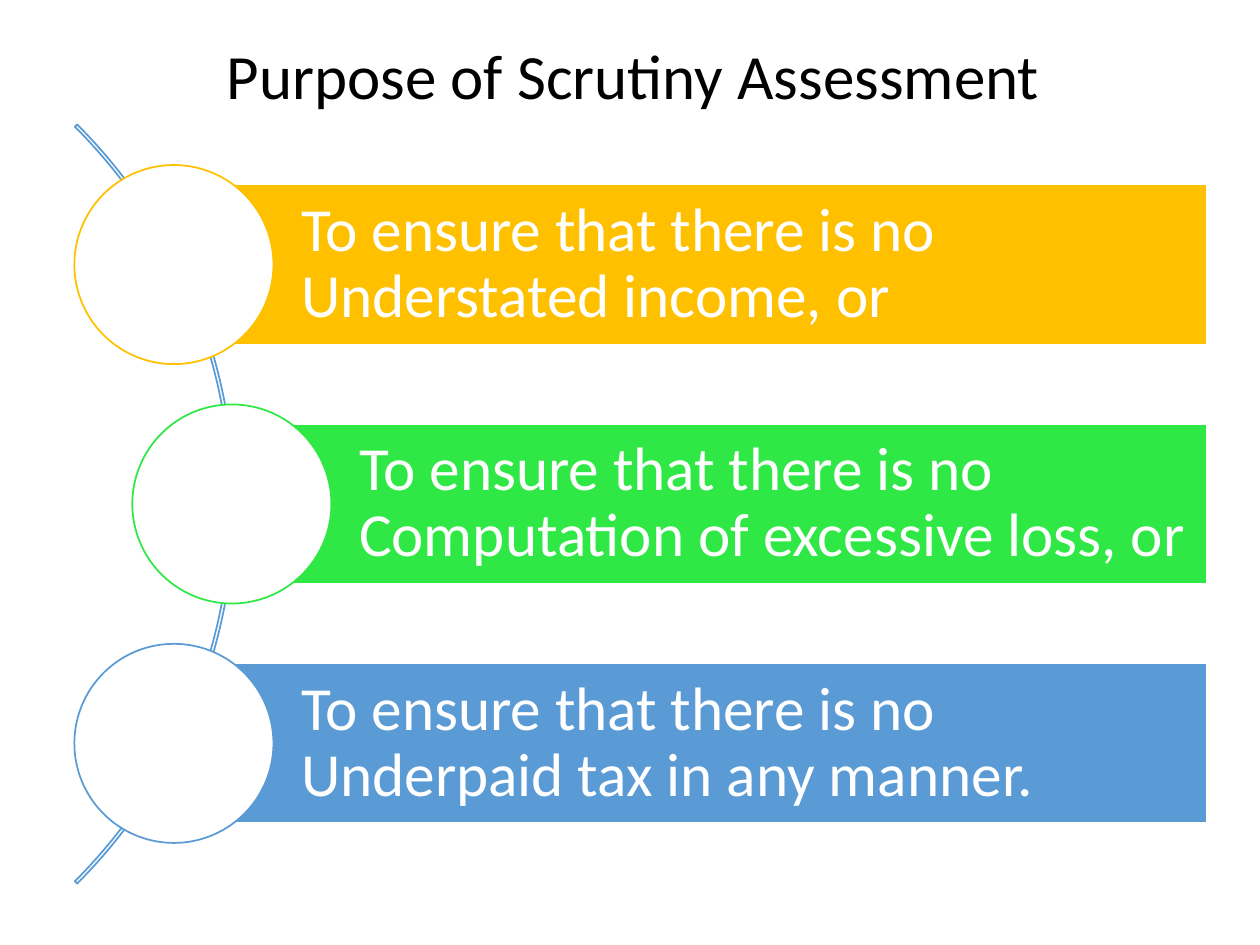
from dataclasses import dataclass

from pptx import Presentation
from pptx.dml.color import RGBColor
from pptx.enum.shapes import MSO_SHAPE
from pptx.enum.text import MSO_ANCHOR, MSO_AUTO_SIZE, PP_ALIGN
from pptx.util import Inches, Pt

ARC, BAR, CIRCLE = MSO_SHAPE.BLOCK_ARC, MSO_SHAPE.RECTANGLE, MSO_SHAPE.OVAL
MIDDLE, TOP = MSO_ANCHOR.MIDDLE, MSO_ANCHOR.TOP
LEFT, CENTER = PP_ALIGN.LEFT, PP_ALIGN.CENTER
NO_AUTOFIT = MSO_AUTO_SIZE.NONE
TITLE_ONLY = 5


@dataclass(frozen=True)
class Theme:
    font: str = "Calibri"
    title_size: int = 36
    body_size: int = 35
    black: str = "000000"
    white: str = "FFFFFF"
    gold: str = "FFC000"
    green: str = "30E845"
    blue: str = "5B9BD5"


THEME = Theme()

# Centre of each circle's column, then bar colour and wording
PURPOSES = [
    (1.38, THEME.gold, "To ensure that there is no Understated income, or"),
    (1.84, THEME.green,
     "To ensure that there is no Computation of excessive loss, or"),
    (1.38, THEME.blue, "To ensure that there is no Underpaid tax in any manner."),
]
FIRST_CENTER, ROW_STEP = 2.1, 1.9
BAR_RIGHT, BAR_HEIGHT = 9.58, 1.27
CIRCLE_SIZE = 1.58
ARC_LEFT, ARC_TOP, ARC_SIZE = -6.66, -0.26, 8.52


def set_text(shape, text, *, size, color, align=LEFT, anchor=MIDDLE,
             insets=(0.1, 0.1, 0.1, 0.1), wrap=True, line_spacing=1.0):
    frame = shape.text_frame
    frame.text = text
    frame.auto_size = NO_AUTOFIT
    frame.word_wrap = wrap
    frame.vertical_anchor = anchor
    (frame.margin_left, frame.margin_top,
     frame.margin_right, frame.margin_bottom) = map(Inches, insets)
    paragraph = frame.paragraphs[0]
    paragraph.alignment = align
    paragraph.line_spacing = line_spacing
    font = paragraph.runs[0].font
    font.name = THEME.font
    font.size = Pt(size)
    font.color.rgb = RGBColor.from_string(color)


def add_shape(slide, kind, left, top, width, height, *, line, fill=None):
    shape = slide.shapes.add_shape(
        kind, Inches(left), Inches(top), Inches(width), Inches(height))
    shape.shadow.inherit = False
    if fill:
        shape.fill.solid()
        shape.fill.fore_color.rgb = RGBColor.from_string(fill)
    else:
        shape.fill.background()
    shape.line.color.rgb = RGBColor.from_string(line)
    shape.line.width = Pt(1)
    return shape


def add_title(slide, text):
    title = slide.shapes.title
    title.left, title.top = Inches(1.67), Inches(0.24)
    title.width, title.height = Inches(6.71), Inches(0.71)
    set_text(title, text, size=THEME.title_size, color=THEME.black, align=CENTER,
             anchor=TOP, insets=(0.1, 0.05, 0.1, 0.05), wrap=False)


def add_arc(slide):
    arc = add_shape(slide, ARC, ARC_LEFT, ARC_TOP, ARC_SIZE, ARC_SIZE,
                    line=THEME.blue)
    # Start angle, end angle (315 and 45 degrees) and band thickness
    for index, value in enumerate((189, 27, 0.003)):
        arc.adjustments[index] = value


def add_purpose(slide, center_x, center_y, color, text):
    bar = add_shape(slide, BAR, center_x, center_y - BAR_HEIGHT / 2,
                    BAR_RIGHT - center_x, BAR_HEIGHT, fill=color, line=THEME.white)
    set_text(bar, text, size=THEME.body_size, color=THEME.white,
             insets=(1.01, 0.1, 0.1, 0.1), line_spacing=0.9)
    add_shape(slide, CIRCLE, center_x - CIRCLE_SIZE / 2, center_y - CIRCLE_SIZE / 2,
              CIRCLE_SIZE, CIRCLE_SIZE, fill=THEME.white, line=color)


def main():
    presentation = Presentation()
    presentation.slide_width, presentation.slide_height = Inches(10), Inches(7.5)
    slide = presentation.slides.add_slide(presentation.slide_layouts[TITLE_ONLY])

    # Heading
    add_title(slide, "Purpose of Scrutiny Assessment")

    # Curve behind the list, then one row per purpose
    add_arc(slide)
    for row, (center_x, color, text) in enumerate(PURPOSES):
        add_purpose(slide, center_x, FIRST_CENTER + row * ROW_STEP, color, text)

    presentation.save("out.pptx")


if __name__ == "__main__":
    main()
